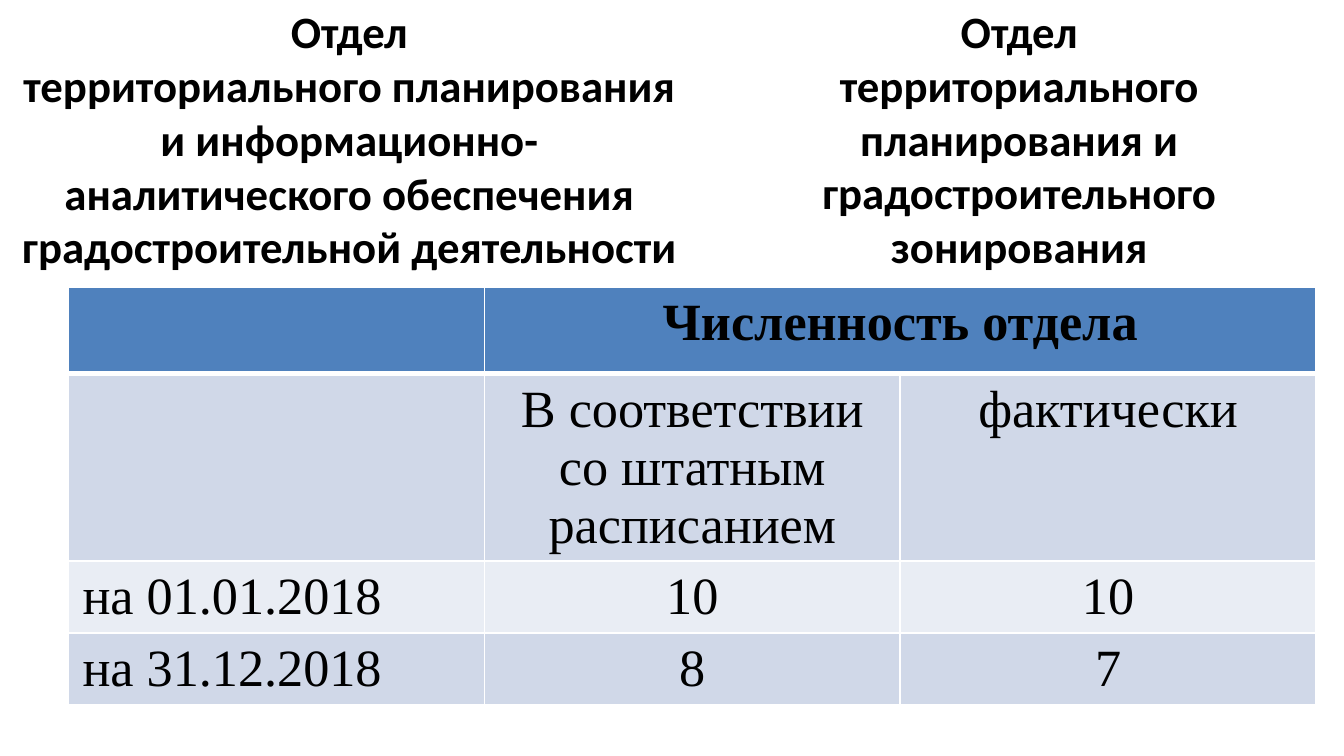
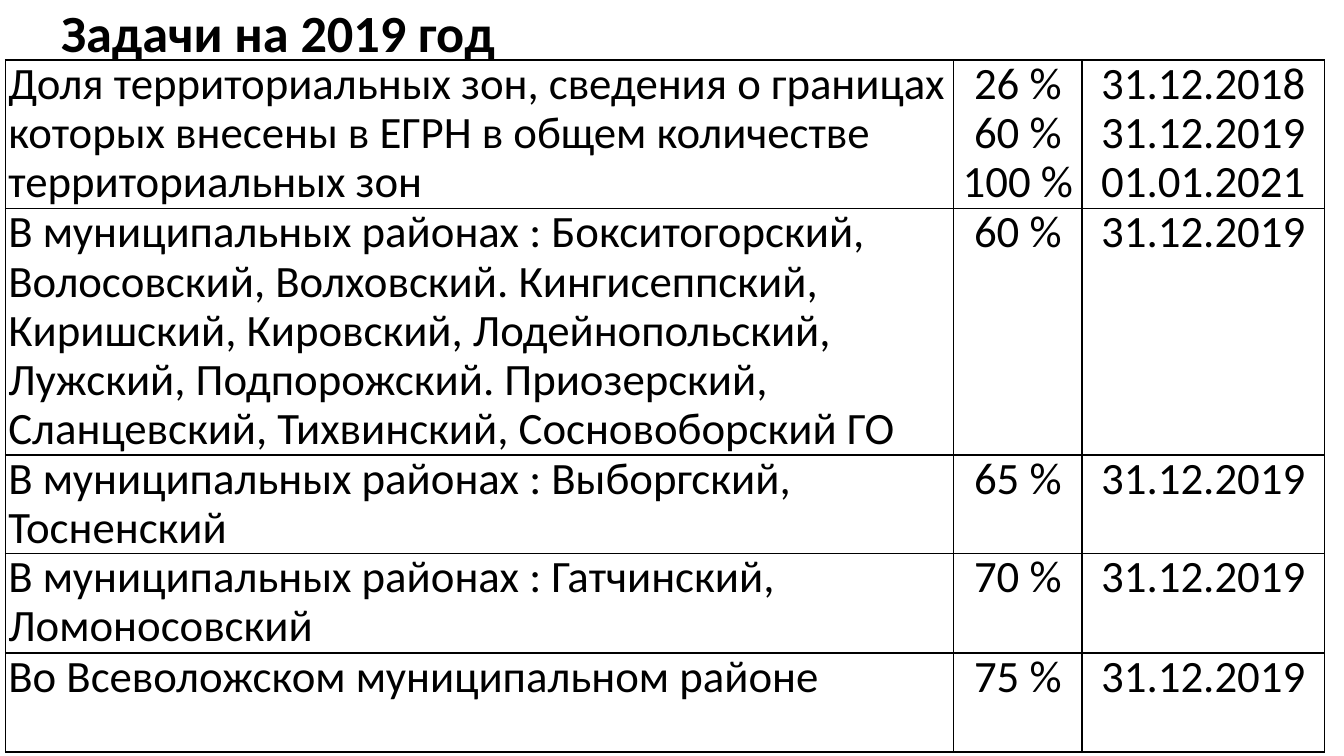
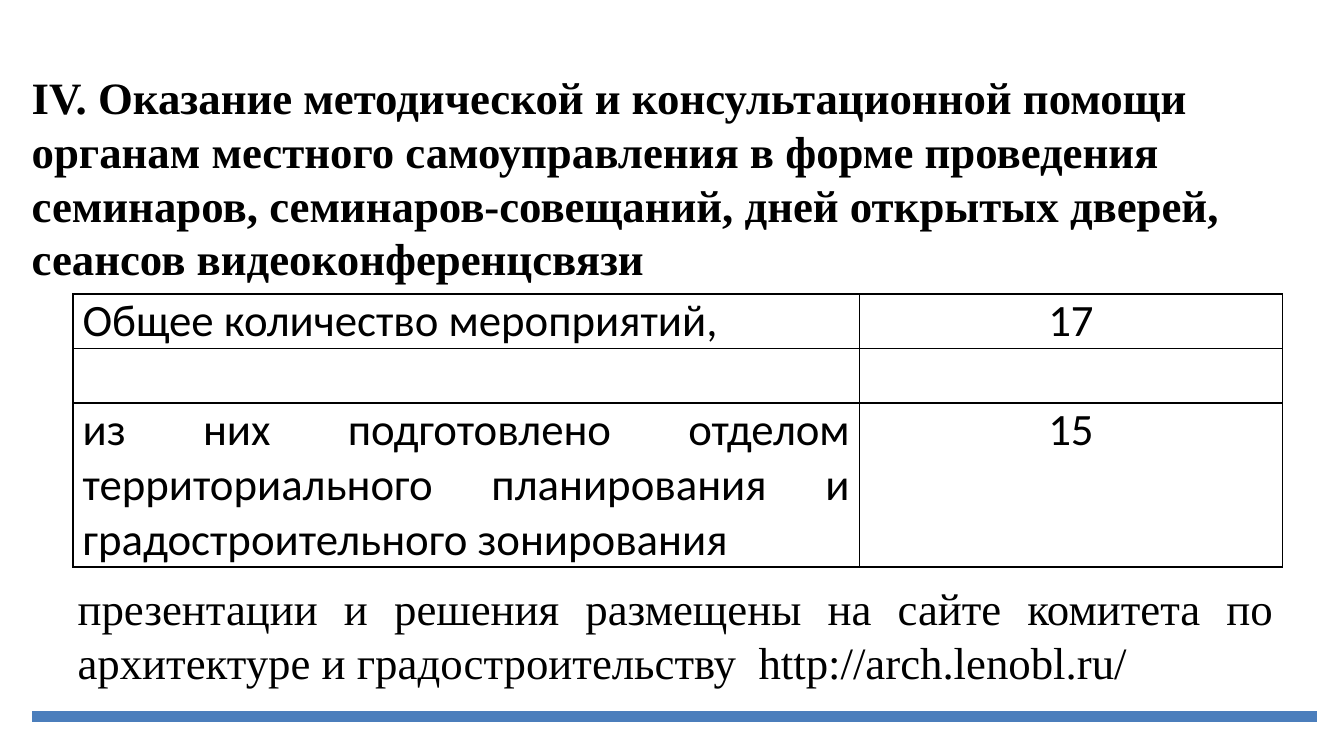
from lxml import etree
from pptx import Presentation
from pptx import util as u
from pptx.dml.color import RGBColor
from pptx.enum import shapes, text
from pptx.oxml.ns import qn

BLACK = RGBColor(0x00, 0x00, 0x00)
WHITE = RGBColor(0xFF, 0xFF, 0xFF)
HEADER = RGBColor(0x4F, 0x81, 0xBD)
BAND_DARK = RGBColor(0xD0, 0xD8, 0xE8)
BAND_LIGHT = RGBColor(0xE9, 0xED, 0xF4)
RULE = RGBColor(0x4B, 0x7E, 0xBC)

SANS = "Calibri"
SERIF = "Times New Roman"
LEFT = text.PP_ALIGN.LEFT
CENTER = text.PP_ALIGN.CENTER
JUSTIFY = text.PP_ALIGN.JUSTIFY


def px(n):
    return u.Emu(n * 9525)


class Deck:
    def __init__(self):
        self.prs = Presentation()
        self.prs.slide_width, self.prs.slide_height = px(960), px(540)
        self.s = None

    def slide(self):
        self.s = self.prs.slides.add_slide(self.prs.slide_layouts[5])

    def style(self, tf, words, font, size, bold, align, spacing=None):
        tf.text = words
        for p in tf.paragraphs:
            p.alignment = align
            if spacing:
                p.line_spacing = spacing
            for r in p.runs:
                r.font.name = font
                r.font.size = u.Pt(size)
                r.font.bold = bold
                r.font.color.rgb = BLACK

    def frame(self, tf, words, font, size, bold, align):
        tf.word_wrap = True
        tf.auto_size = text.MSO_AUTO_SIZE.NONE
        tf.vertical_anchor = text.MSO_ANCHOR.TOP
        self.style(tf, words, font, size, bold, align)

    def title(self, box, words, font=SANS, size=24, align=LEFT):
        sp = self.s.shapes.title
        sp.left, sp.top, sp.width, sp.height = map(px, box)
        self.frame(sp.text_frame, words, font, size, True, align)

    def text(self, box, words, font=SANS, size=24, bold=False, align=LEFT):
        sp = self.s.shapes.add_textbox(*map(px, box))
        self.frame(sp.text_frame, words, font, size, bold, align)

    def line(self, x1, y1, x2, y2, color, weight):
        c = self.s.shapes.add_connector(
            shapes.MSO_CONNECTOR.STRAIGHT, px(x1), px(y1), px(x2), px(y2))
        c.line.color.rgb = color
        c.line.width = u.Pt(weight)
        etree.SubElement(c._element.spPr, qn("a:effectLst"))

    def borders(self, cell, color, **weights):
        tcPr = cell._tc.get_or_add_tcPr()
        for i, side in enumerate("LRTB"):
            ln = etree.Element(qn("a:ln" + side), w=str(u.Pt(weights.get(side, 1))))
            fill = etree.SubElement(ln, qn("a:solidFill"))
            etree.SubElement(fill, qn("a:srgbClr"), val=str(color))
            tcPr.insert(i, ln)

    def table(self, x, y, cols, heights, rows, font=SANS, size=24, first=LEFT,
              inset=(10, 5), spacing=None, border=BLACK, fills=None):
        t = self.s.shapes.add_table(
            len(rows), len(cols), px(x), px(y), px(sum(cols)), px(sum(heights))).table
        t.first_row = t.horz_banding = False
        for col, w in zip(t.columns, cols):
            col.width = px(w)
        for row, h in zip(t.rows, heights):
            row.height = px(h)
        for i, row in enumerate(rows):
            for j, words in enumerate(row):
                cell = t.cell(i, j)
                cell.margin_left = cell.margin_right = px(inset[0])
                cell.margin_top = cell.margin_bottom = px(inset[1])
                self.style(cell.text_frame, words, font, size, bool(fills) and i == 0,
                           CENTER if j else first, spacing)
                if fills:
                    cell.fill.solid()
                    cell.fill.fore_color.rgb = fills[i]
                    self.borders(cell, border, T=3 if i == 1 else 1, B=1 if i else 3)
                else:
                    cell.fill.background()
                    self.borders(cell, border)
        return t


def staff(d):
    d.slide()
    d.title((0, -2, 499, 204),
            "Отдел\nтерриториального планирования и информационно-аналитического "
            "обеспечения градостроительной деятельности", align=CENTER)
    d.text((488, -2, 480, 204),
           "Отдел\nтерриториального планирования и градостроительного зонирования",
           bold=True, align=CENTER)
    t = d.table(49, 205, [297] * 3, [62, 133, 51, 51], [
        ("", "Численность отдела", ""),
        ("", "В соответствии со штатным расписанием", "фактически"),
        ("на 01.01.2018", "10", "10"),
        ("на 31.12.2018", "8", "7"),
    ], font=SERIF, size=28, border=WHITE,
        fills=[HEADER, BAND_DARK, BAND_LIGHT, BAND_DARK])
    t.cell(0, 1).merge(t.cell(0, 2))


def tasks(d):
    d.slide()
    d.title((34, -5, 907, 48), "Задачи на 2019 год", size=28)
    area = "В муниципальных районах : "
    deadline = "31.12.2019"
    d.table(4, 43, [677, 92, 173], [106, 176, 70, 71, 71], [
        ("Доля территориальных зон, сведения о границах которых внесены в ЕГРН "
         "в общем количестве территориальных зон",
         "26 %\n60 %\n100 %", "31.12.2018\n31.12.2019\n01.01.2021"),
        (area + "Бокситогорский, Волосовский, Волховский. Кингисеппский, "
         "Киришский, Кировский, Лодейнопольский, Лужский, Подпорожский. "
         "Приозерский, Сланцевский, Тихвинский, Сосновоборский ГО",
         "60 %", deadline),
        (area + "Выборгский, Тосненский", "65 %", deadline),
        (area + "Гатчинский, Ломоносовский", "70 %", deadline),
        ("Во Всеволожском муниципальном районе", "75 %", deadline),
    ], inset=(2, 0), spacing=0.9)


def events(d):
    d.slide()
    d.line(23, 512, 941, 512, RULE, 6)
    d.title((13, 45, 937, 165),
            "IV. Оказание методической и консультационной помощи органам местного "
            "самоуправления в форме проведения семинаров, семинаров-совещаний, "
            "дней открытых дверей, сеансов видеоконференцсвязи", font=SERIF)
    d.table(52, 210, [562, 302], [38, 39, 116], [
        ("Общее количество мероприятий,", "17"),
        ("", ""),
        ("из них подготовлено отделом территориального планирования и "
         "градостроительного зонирования", "15"),
    ], first=JUSTIFY, inset=(7, 0))
    d.text((46, 410, 873, 87),
           "презентации и решения размещены на сайте комитета по архитектуре и "
           "градостроительству  http://arch.lenobl.ru/", font=SERIF, align=JUSTIFY)


def main():
    d = Deck()
    for build in (staff, tasks, events):
        build(d)
    d.prs.save("out.pptx")


if __name__ == "__main__":
    main()
